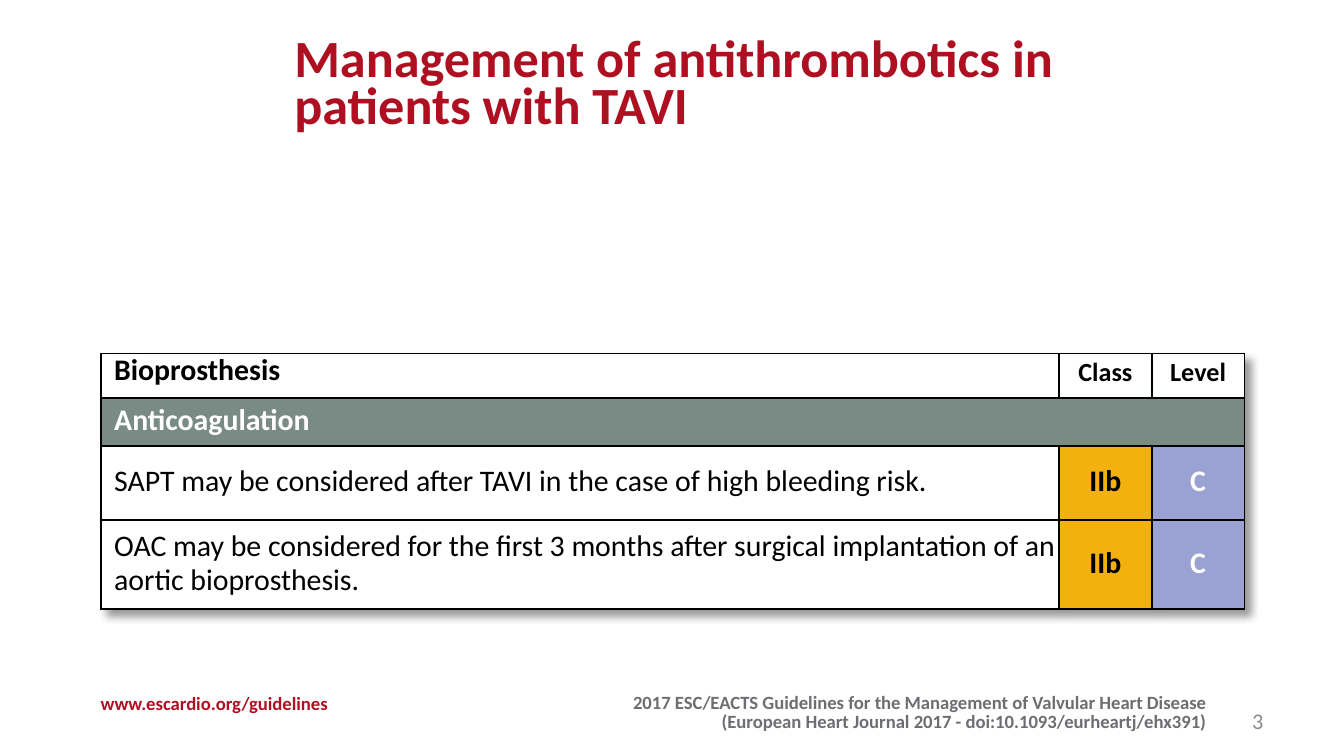
from lxml import etree
from pptx import Presentation
from pptx.dml.color import RGBColor
from pptx.enum.text import MSO_ANCHOR, PP_ALIGN
from pptx.oxml import parse_xml
from pptx.oxml.ns import qn
from pptx.util import Inches, Pt

LEFT, CENTER, RIGHT = PP_ALIGN.LEFT, PP_ALIGN.CENTER, PP_ALIGN.RIGHT
TOP, MIDDLE = MSO_ANCHOR.TOP, MSO_ANCHOR.MIDDLE
TITLE_ONLY = 5
SLIDE_WIDTH = Inches(10)
SLIDE_HEIGHT = SLIDE_WIDTH * 9 // 16
RED, GREY, PALE_GREY = "AE1022", "6D6E71", "8C8C8C"
BLACK, WHITE = "000000", "FFFFFF"
GREEN, AMBER, LILAC = "798B84", "F2B10E", "99A2D2"
NAMESPACE = "http://schemas.openxmlformats.org/drawingml/2006/main"

COLUMN_WIDTHS = [7.13, 0.69, 0.69]
ROW_HEIGHTS = [0.33, 0.36, 0.55, 0.66]
RECOMMENDATIONS = [
    ("SAPT may be considered after TAVI in the case of high bleeding risk.", "IIb", "C"),
    ("OAC may be considered for the first 3 months after surgical implantation"
     " of an aortic bioprosthesis.", "IIb", "C"),
]


def color(value):
    """Return a hex string as a colour."""
    return RGBColor.from_string(value)


def set_attributes(target, values):
    """Set every attribute named in a dict."""
    for name, value in values.items():
        setattr(target, name, value)


def write_text(frame, text, size, text_color, bold=True, align=LEFT, spacing=None):
    """Write one formatted paragraph into a text frame."""
    paragraph = frame.paragraphs[0]
    paragraph.text = text
    paragraph.alignment = align
    if spacing:
        paragraph.line_spacing = Pt(spacing)
    set_attributes(paragraph.font, {"name": "Calibri", "size": Pt(size), "bold": bold})
    paragraph.font.color.rgb = color(text_color)


def place(shape, left, top, width, height):
    """Move and size a shape in inches."""
    set_attributes(shape, {"left": Inches(left), "top": Inches(top),
                           "width": Inches(width), "height": Inches(height)})


def set_title(slide, text):
    """Place and write the slide title."""
    title = slide.shapes.title
    place(title, 2.09, 0.26, 6.62, 0.82)
    set_attributes(title.text_frame, {"vertical_anchor": TOP, "word_wrap": True})
    write_text(title.text_frame, text, 28, RED, spacing=25)


def add_label(slide, box, text, size, text_color, anchor=TOP, wrap=False, **style):
    """Add a text box with one paragraph."""
    label = slide.shapes.add_textbox(*map(Inches, box))
    set_attributes(label.text_frame, {"vertical_anchor": anchor, "word_wrap": wrap})
    write_text(label.text_frame, text, size, text_color, **style)


def add_borders(cell):
    """Draw a thin black line on each side of a cell."""
    properties = cell._tc.get_or_add_tcPr()
    for position, side in enumerate(("lnL", "lnR", "lnT", "lnB")):
        properties.insert(position, parse_xml(
            f'<a:{side} xmlns:a="{NAMESPACE}" w="12700"><a:solidFill>'
            f'<a:srgbClr val="{BLACK}"/></a:solidFill></a:{side}>'))


def add_shadow(table):
    """Give the table a soft shadow to the lower right."""
    effects = etree.Element(qn("a:effectLst"))
    shadow = etree.SubElement(effects, qn("a:outerShdw"), blurRad="50800", dist="50800",
                              dir="2700000", algn="tl", rotWithShape="0")
    shade = etree.SubElement(shadow, qn("a:srgbClr"), val=BLACK)
    etree.SubElement(shade, qn("a:alpha"), val="40000")
    table._tbl.tblPr.insert(0, effects)


def fill_cell(cell, text, fill, margins=None, **style):
    """Write, fill and outline one table cell."""
    cell.fill.solid()
    cell.fill.fore_color.rgb = color(fill)
    set_attributes(cell, {"vertical_anchor": MIDDLE, **(margins or {})})
    write_text(cell.text_frame, text, **style)
    add_borders(cell)


def add_recommendations(slide):
    """Add the table of recommendations with class and level."""
    frame = slide.shapes.add_table(len(ROW_HEIGHTS), len(COLUMN_WIDTHS), Inches(0.75),
                                   Inches(2.63), Inches(sum(COLUMN_WIDTHS)),
                                   Inches(sum(ROW_HEIGHTS)))
    table = frame.table
    set_attributes(table, {"first_row": False, "horz_banding": False})
    for column, width in zip(table.columns, COLUMN_WIDTHS):
        column.width = Inches(width)
    for row, height in zip(table.rows, ROW_HEIGHTS):
        row.height = Inches(height)

    headings = [("Bioprosthesis", 16, LEFT), ("Class", 14, CENTER), ("Level", 14, CENTER)]
    for column, (text, size, align) in enumerate(headings):
        fill_cell(table.cell(0, column), text, WHITE, size=size, text_color=BLACK,
                  align=align, spacing=14)

    table.cell(1, 0).merge(table.cell(1, 2))
    for column, text in enumerate(("Anticoagulation", "", "")):
        fill_cell(table.cell(1, column), text, GREEN, size=16, text_color=WHITE, spacing=18)

    looks = [(WHITE, BLACK, False, LEFT, 0), (AMBER, BLACK, True, CENTER, 0.1),
             (LILAC, WHITE, True, CENTER, 0.1)]
    for row, texts in enumerate(RECOMMENDATIONS, start=2):
        for column, (text, look) in enumerate(zip(texts, looks)):
            fill, text_color, bold, align, right = look
            margins = {"margin_top": Inches(0.08), "margin_bottom": Inches(0.08),
                       "margin_right": Inches(right)}
            fill_cell(table.cell(row, column), text, fill, margins, size=16,
                      text_color=text_color, bold=bold, align=align, spacing=18)
    add_shadow(table)


def main():
    """Build and save the presentation."""
    presentation = Presentation()
    set_attributes(presentation, {"slide_width": SLIDE_WIDTH, "slide_height": SLIDE_HEIGHT})
    slide = presentation.slides.add_slide(presentation.slide_layouts[TITLE_ONLY])
    set_title(slide, "Management of antithrombotics in patients with TAVI")
    add_label(slide, (4.54, 5.12, 4.53, 0.52),
              "2017 ESC/EACTS Guidelines for the Management of Valvular Heart Disease\v"
              "(European Heart Journal 2017 - doi:10.1093/eurheartj/ehx391)",
              10, GREY, align=RIGHT, spacing=10)
    add_label(slide, (0.65, 5.1, 1.92, 0.27), "www.escardio.org/guidelines", 10, RED)
    add_label(slide, (7.17, 5.21, 2.33, 0.3), "3", 12, PALE_GREY, anchor=MIDDLE,
              wrap=True, bold=False, align=RIGHT)
    add_recommendations(slide)
    presentation.save("out.pptx")


if __name__ == "__main__":
    main()
